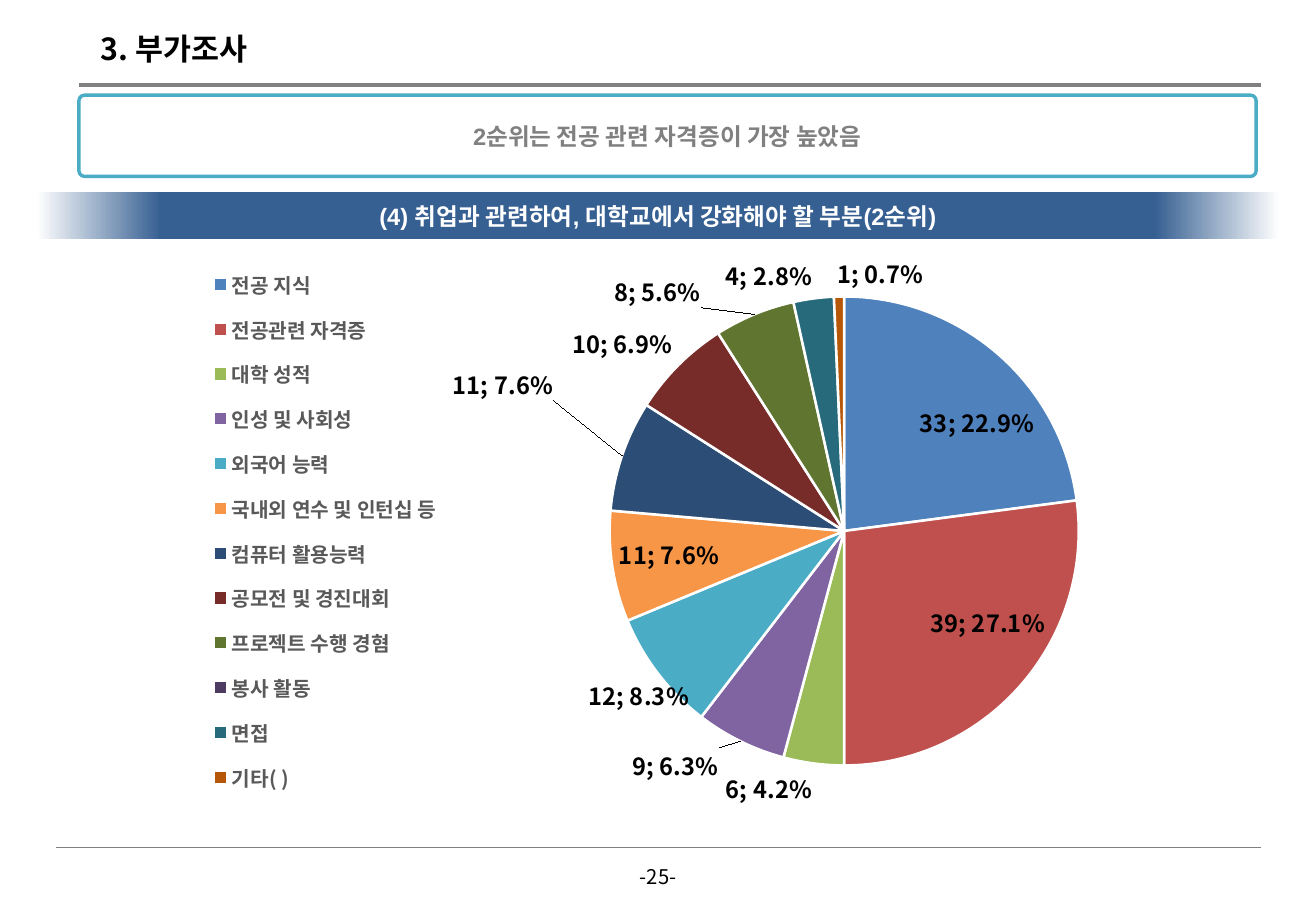
from lxml import etree
from pptx import Presentation
from pptx.chart.data import CategoryChartData
from pptx.dml.color import RGBColor
from pptx.enum import chart as charts, shapes, text
from pptx.oxml import parse_xml
from pptx.oxml.ns import nsdecls, qn
from pptx.util import Cm, Pt

KOREAN, LATIN = "Noto Sans CJK KR", "Arial"
BLACK = RGBColor(0x00, 0x00, 0x00)
WHITE = RGBColor(0xFF, 0xFF, 0xFF)
GRAY = RGBColor(0x80, 0x80, 0x80)
LEGEND_GRAY = RGBColor(0x59, 0x59, 0x59)
TEAL = RGBColor(0x4B, 0xAC, 0xC6)
NAVY = RGBColor(0x37, 0x60, 0x92)

ANSWERS = [
    ("전공 지식", 33, RGBColor(0x4F, 0x81, 0xBD)),
    ("전공관련 자격증", 39, RGBColor(0xC0, 0x50, 0x4D)),
    ("대학 성적", 6, RGBColor(0x9B, 0xBB, 0x59)),
    ("인성 및 사회성", 9, RGBColor(0x80, 0x64, 0xA2)),
    ("외국어 능력", 12, TEAL),
    ("국내외 연수 및 인턴십 등", 11, RGBColor(0xF7, 0x96, 0x46)),
    ("컴퓨터 활용능력", 11, RGBColor(0x2C, 0x4D, 0x75)),
    ("공모전 및 경진대회", 10, RGBColor(0x77, 0x2C, 0x2A)),
    ("프로젝트 수행 경혐", 8, RGBColor(0x5F, 0x75, 0x30)),
    ("봉사 활동", 0, RGBColor(0x4D, 0x3B, 0x62)),
    ("면접", 4, RGBColor(0x27, 0x6A, 0x7C)),
    ("기타( )", 1, RGBColor(0xB6, 0x57, 0x08)),
]
# Shifts from the automatic place, in shares of the chart area
LABEL_SHIFTS = {"외국어 능력": (0.03, 0), "컴퓨터 활용능력": (-0.05, -0.09)}


def style_font(font, size, color, bold=False, name=KOREAN):
    font.size, font.bold, font.name = Pt(size), bold, name
    font.color.rgb = color


def write(shape, wording, size, color, bold=False, name=KOREAN,
          align=text.PP_ALIGN.CENTER):
    frame = shape.text_frame
    frame.text = wording
    frame.vertical_anchor = text.MSO_ANCHOR.MIDDLE
    line = frame.paragraphs[0]
    line.alignment = align
    style_font(line.font, size, color, bold, name)
    props = line.runs[0].font._element
    etree.SubElement(props, qn("a:ea")).set("typeface", KOREAN)
    return frame


def add_rule(slide, left, right, top, width):
    rule = slide.shapes.add_connector(
        shapes.MSO_CONNECTOR.STRAIGHT, Cm(left), Cm(top), Cm(right), Cm(top))
    rule.line.color.rgb = GRAY
    rule.line.width = Pt(width)
    etree.SubElement(rule._element.spPr, qn("a:effectLst"))


def add_title(slide, wording):
    title = slide.shapes.title
    title.left, title.top, title.width, title.height = Cm(1.85), Cm(0.51), Cm(3.86), Cm(1.02)
    frame = write(title, wording, 18, BLACK, True, align=text.PP_ALIGN.LEFT)
    frame.word_wrap = False


def add_finding(slide, wording):
    finding = slide.shapes.add_shape(
        shapes.MSO_SHAPE.ROUNDED_RECTANGLE, Cm(1.65), Cm(1.99), Cm(24.61), Cm(1.7))
    finding.adjustments[0] = 0.07
    finding.shadow.inherit = False
    finding.fill.solid()
    finding.fill.fore_color.rgb = WHITE
    finding.line.color.rgb = TEAL
    finding.line.width = Pt(2)
    write(finding, wording, 14, GRAY, True, LATIN)


def add_question(slide, wording):
    """Add the banner whose colour fades out at both ends."""
    banner = slide.shapes.add_shape(
        shapes.MSO_SHAPE.RECTANGLE, Cm(0.76), Cm(4.01), Cm(25.98), Cm(1))
    banner.shadow.inherit = False
    banner.line.fill.background()
    banner.fill.gradient()
    banner.fill.gradient_angle = 0
    stops = banner._element.spPr.find(qn("a:gradFill")).find(qn("a:gsLst"))
    for stop in list(stops):
        stops.remove(stop)
    for percent, color in ((0, WHITE), (10, NAVY), (90, NAVY), (100, WHITE)):
        stop = etree.SubElement(stops, qn("a:gs"), pos=str(percent * 1000))
        etree.SubElement(stop, qn("a:srgbClr"), val=str(color))
    write(banner, wording, 14, WHITE, True, LATIN)


def add_page_number(slide, wording):
    number = slide.shapes.add_textbox(Cm(13.06), Cm(17.95), Cm(1.4), Cm(0.76))
    write(number, wording, 12, BLACK).word_wrap = False


def manual_layout(x, y, w, h, inner=False):
    """Return a chart layout given in shares of the chart area."""
    target = '<c:layoutTarget val="inner"/>' if inner else ""
    modes = '<c:xMode val="edge"/><c:yMode val="edge"/>'
    place = "".join(f'<c:{key} val="{share}"/>'
                    for key, share in zip("xywh", (x, y, w, h)))
    return parse_xml(f'<c:layout {nsdecls("c")}><c:manualLayout>{target}{modes}{place}'
                     '</c:manualLayout></c:layout>')


def point_label(index, content):
    return parse_xml(f'<c:dLbl {nsdecls("c")}><c:idx val="{index}"/>{content}</c:dLbl>')


def shifted_label(index, x, y):
    shows = "".join(f'<c:show{part} val="{int(part in ("Val", "Percent"))}"/>' for part in
                    ("LegendKey", "Val", "CatName", "SerName", "Percent", "BubbleSize"))
    return point_label(index, f'<c:layout><c:manualLayout><c:x val="{x}"/><c:y val="{y}"/>'
                              '</c:manualLayout></c:layout><c:dLblPos val="bestFit"/>'
                              f'{shows}<c:separator>; </c:separator>')


def add_labels(series):
    labels = series.data_labels
    labels.show_value = labels.show_percentage = True
    labels.number_format, labels.number_format_is_linked = "0.0%", False
    labels.position = charts.XL_LABEL_POSITION.BEST_FIT
    style_font(labels.font, 14, BLACK, True)
    xml = labels._element
    separator = etree.Element(qn("c:separator"))
    separator.text = "; "
    xml.find(qn("c:showBubbleSize")).addnext(separator)
    special = []
    for index, (answer, count, _) in enumerate(ANSWERS):
        if count == 0:
            special.append(point_label(index, '<c:delete val="1"/>'))
        elif answer in LABEL_SHIFTS:
            special.append(shifted_label(index, *LABEL_SHIFTS[answer]))
    for place, label in enumerate(special):
        xml.insert(place, label)
    for answer in LABEL_SHIFTS:
        index = [name for name, _, _ in ANSWERS].index(answer)
        style_font(series.points[index].data_label.font, 14, BLACK, True)


def add_answer_pie(slide):
    data = CategoryChartData()
    data.categories = [answer for answer, _, _ in ANSWERS]
    data.add_series("Series 1", [count for _, count, _ in ANSWERS])
    pie = slide.shapes.add_chart(
        charts.XL_CHART_TYPE.PIE, Cm(1.13), Cm(4.96), Cm(25.81), Cm(12.29), data).chart
    pie.has_title = False
    style_font(pie.font, 10, BLACK)

    pie.has_legend = True
    legend = pie.legend
    legend.position = charts.XL_LEGEND_POSITION.LEFT
    legend.include_in_layout = False
    style_font(legend.font, 12, LEGEND_GRAY, True)
    for old in legend._element.findall(qn("c:layout")):
        legend._element.remove(old)
    legend._element.find(qn("c:legendPos")).addnext(manual_layout(0.11, 0.03, 0.22, 0.94))

    plot_area = pie._chartSpace.chart.plotArea
    for old in plot_area.findall(qn("c:layout")):
        plot_area.remove(old)
    plot_area.insert(0, manual_layout(0.45, 0.1, 0.38, 0.8, inner=True))

    plot = pie.plots[0]
    plot.vary_by_categories = True
    series = plot.series[0]
    for index, (_, _, color) in enumerate(ANSWERS):
        slice_format = series.points[index].format
        slice_format.fill.solid()
        slice_format.fill.fore_color.rgb = color
        slice_format.line.color.rgb = WHITE
        slice_format.line.width = Pt(1.5)
    add_labels(series)


def main():
    deck = Presentation()
    deck.slide_width, deck.slide_height = Cm(27.51), Cm(19.05)
    slide = deck.slides.add_slide(deck.slide_layouts[5])
    add_rule(slide, 1.65, 26.37, 1.78, 2)
    add_rule(slide, 1.17, 26.37, 17.73, 0.5)
    add_title(slide, "3. 부가조사")
    add_page_number(slide, "-25-")
    add_finding(slide, "2순위는 전공 관련 자격증이 가장 높았음")
    add_question(slide, "(4) 취업과 관련하여, 대학교에서 강화해야 할 부분(2순위)")
    add_answer_pie(slide)
    deck.save("out.pptx")


if __name__ == "__main__":
    main()
